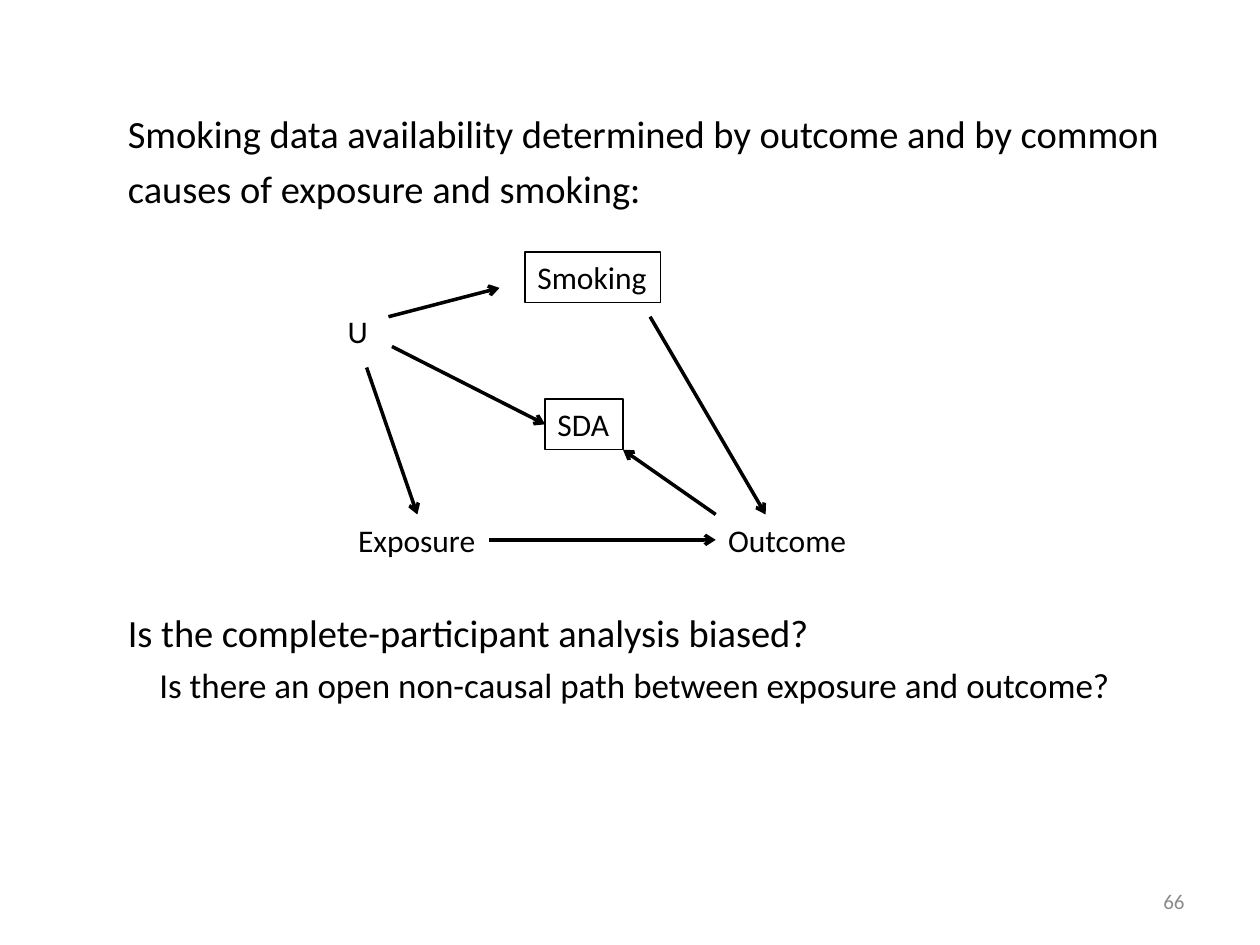
from pptx import Presentation
from pptx.dml.color import RGBColor
from pptx.enum.shapes import MSO_CONNECTOR, MSO_SHAPE
from pptx.enum.text import MSO_ANCHOR, PP_ALIGN
from pptx.oxml.ns import qn
from pptx.util import Pt
from lxml.etree import SubElement


def color(code):
    return RGBColor.from_string(code)


def write(para, text, size=18, ink="000000", align=PP_ALIGN.LEFT,
          lines=1.0, before=0, left=0, first=0):
    props = para._p.get_or_add_pPr()
    props.set("marL", str(Pt(left)))
    props.set("indent", str(Pt(first)))
    para.alignment = align
    para.line_spacing = lines
    para.space_before = Pt(before)
    run = para.add_run()
    run.text = text
    run.font.name = "Calibri"
    run.font.size = Pt(size)
    run.font.color.rgb = color(ink)


class Board:
    ink = "000000"
    thin, thick = 0.75, 2

    def __init__(self, slide):
        self.slide = slide

    def text(self, x, y, w, h, wrap=True, anchor=MSO_ANCHOR.TOP):
        box = self.slide.shapes.add_textbox(Pt(x), Pt(y), Pt(w), Pt(h))
        frame = box.text_frame
        frame.word_wrap = wrap
        frame.vertical_anchor = anchor
        return frame

    def label(self, text, x, y, w, h=29):
        write(self.text(x, y, w, h, wrap=False).paragraphs[0], text)

    def node(self, text, x, y, w, h=29):
        box = self.slide.shapes.add_shape(
            MSO_SHAPE.RECTANGLE, Pt(x), Pt(y), Pt(w), Pt(h))
        box.shadow.inherit = False
        box.fill.background()
        box.line.color.rgb = color(self.ink)
        box.line.width = Pt(self.thin)
        frame = box.text_frame
        frame.word_wrap = False
        frame.vertical_anchor = MSO_ANCHOR.TOP
        write(frame.paragraphs[0], text)

    def arrow(self, start, end):
        line = self.slide.shapes.add_connector(
            MSO_CONNECTOR.STRAIGHT, *map(Pt, start + end))
        line.line.color.rgb = color(self.ink)
        line.line.width = Pt(self.thick)
        SubElement(line.line._get_or_add_ln(), qn("a:tailEnd"), type="arrow")
        SubElement(line._element.spPr, qn("a:effectLst"))


def main():
    deck = Presentation()
    deck.slide_width, deck.slide_height = Pt(720), Pt(540)
    board = Board(deck.slides.add_slide(deck.slide_layouts[6]))

    # Statement above the diagram, questions below it
    body = board.text(66, 54, 618, 356.5)
    write(body.paragraphs[0],
          "Smoking data availability determined by outcome and by common "
          "causes of exposure and smoking:", size=22, lines=1.2)
    write(body.add_paragraph(), "Is the complete-participant analysis biased?",
          size=22, lines=1.2, before=222)
    write(body.add_paragraph(),
          "Is there an open non-causal path between exposure and outcome?",
          size=20, lines=1.2, left=45, first=-27)

    # Slide number
    foot = board.text(516, 500.5, 168, 29, anchor=MSO_ANCHOR.MIDDLE)
    write(foot.paragraphs[0], "66", size=12, ink="8C8C8C",
          align=PP_ALIGN.RIGHT)

    # Variables; the boxed ones are conditioned on
    board.label("Exposure", 197.5, 294, 82)
    board.label("Outcome", 409, 294, 83)
    board.label("U", 191.5, 175, 26)
    board.node("SDA", 311.5, 228, 44.5)
    board.node("Smoking", 300, 144, 77.5)

    # Causal arrows
    for start, end in [
        ((279.5, 308.5), (409, 308.5)),  # Exposure to Outcome
        ((209.5, 210), (238.5, 294)),    # U to Exposure
        ((222, 181), (285.5, 164.5)),    # U to Smoking
        ((371.5, 181), (437.5, 294)),    # Smoking to Outcome
        ((224, 198), (311.5, 242.5)),    # U to SDA
        ((409, 294), (356, 257)),        # Outcome to SDA
    ]:
        board.arrow(start, end)

    deck.save("out.pptx")


if __name__ == "__main__":
    main()
